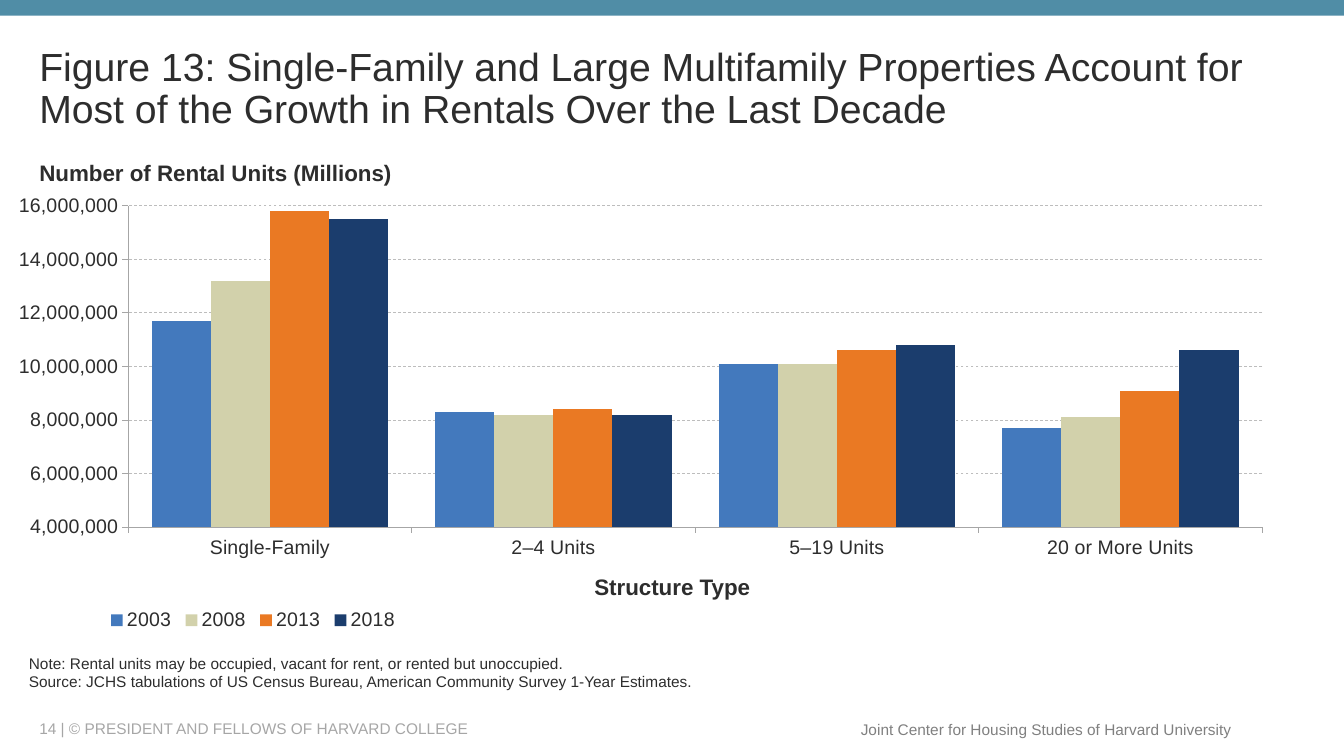
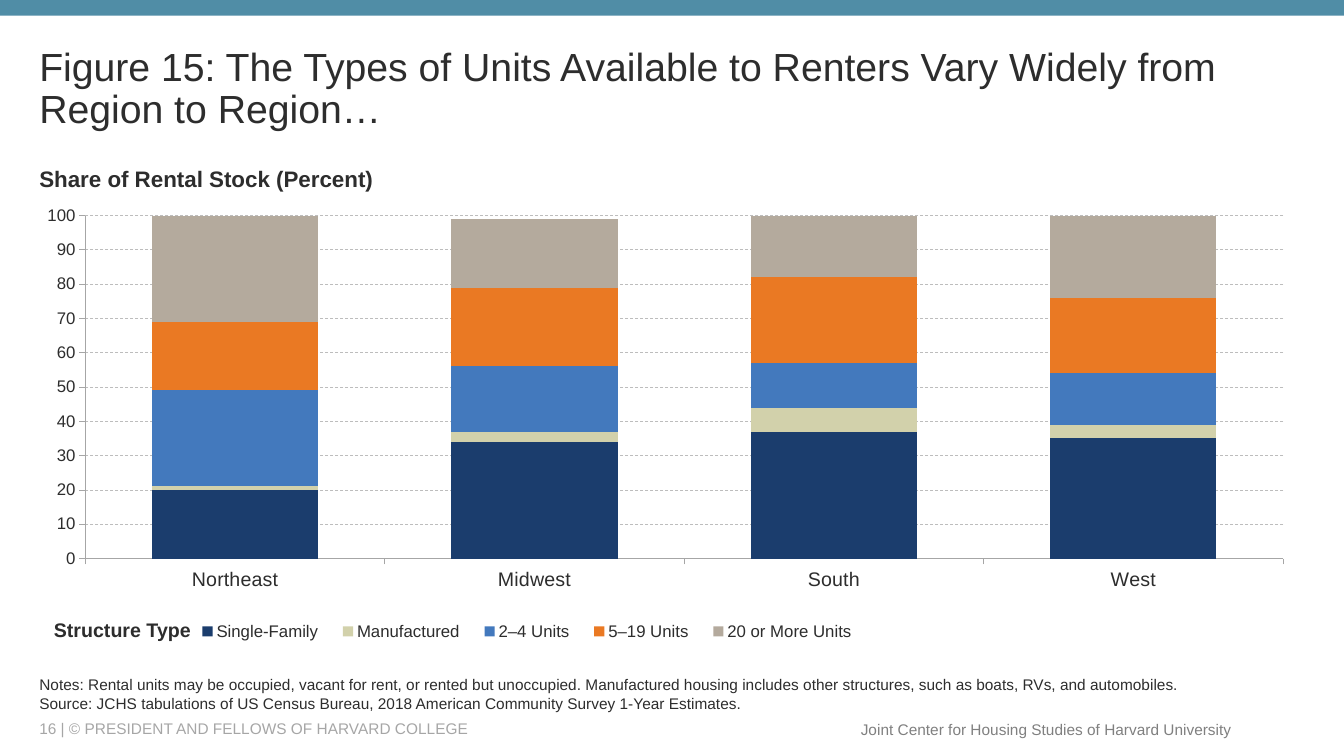
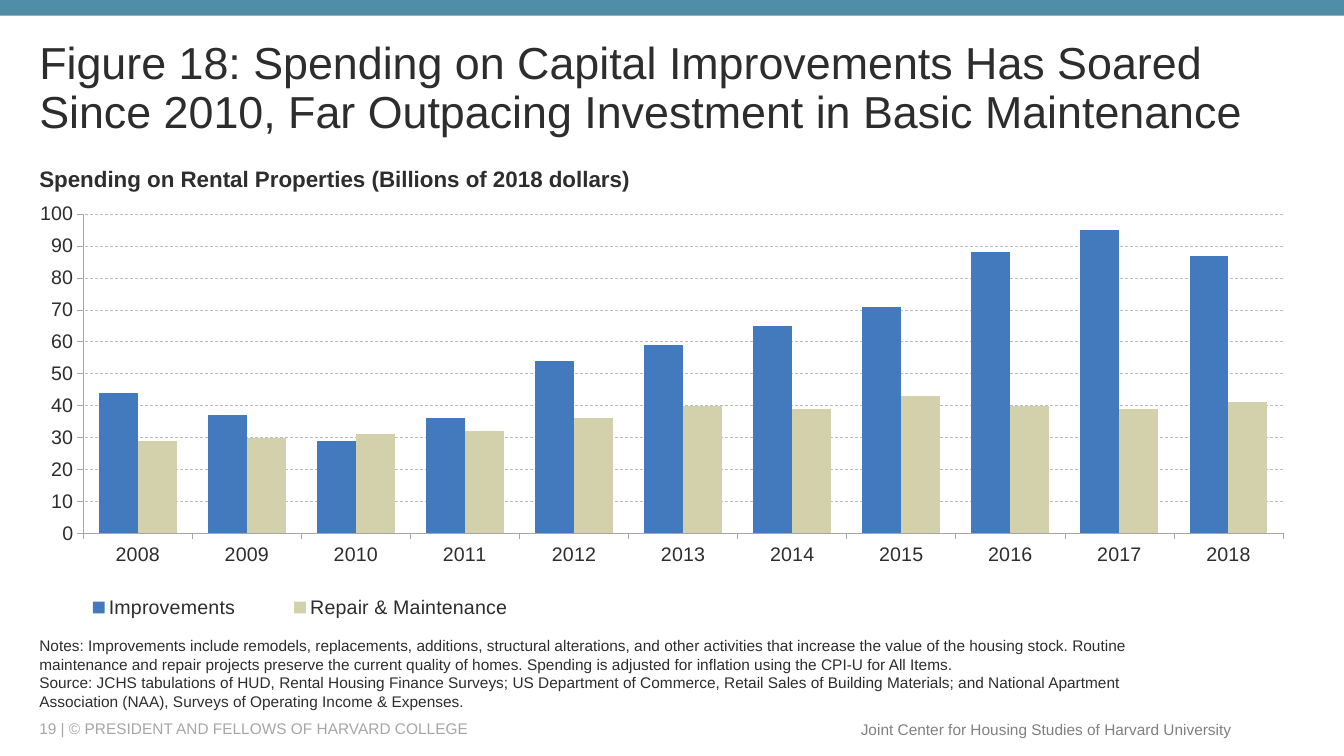
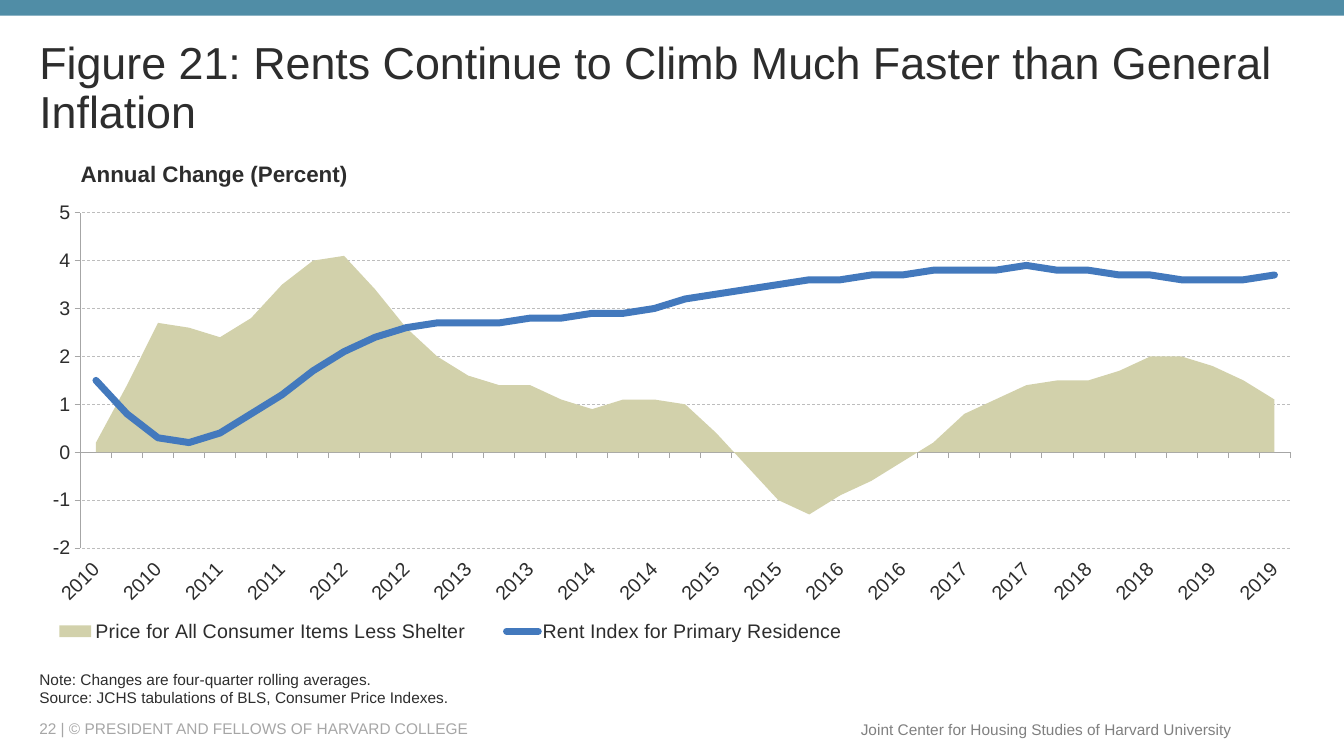
"""Build four slides of rental housing charts."""
from lxml.etree import SubElement
from pptx import Presentation
from pptx.chart.data import CategoryChartData
from pptx.dml.color import RGBColor
from pptx.enum.chart import XL_CHART_TYPE as ChartType
from pptx.enum.chart import XL_LEGEND_POSITION as LegendPosition
from pptx.enum.chart import XL_MARKER_STYLE as MarkerStyle
from pptx.enum.chart import XL_TICK_LABEL_POSITION as LabelPosition
from pptx.enum.chart import XL_TICK_MARK as TickMark
from pptx.enum.dml import MSO_LINE_DASH_STYLE as Dash
from pptx.enum.shapes import MSO_SHAPE as Shape
from pptx.enum.text import MSO_ANCHOR as Anchor
from pptx.enum.text import PP_ALIGN as Align
from pptx.oxml.ns import qn
from pptx.util import Pt

COLORS = {
    "band": "508DA6", "text": "2D2D2D", "copyright": "A6A6A6", "center": "808080",
    "axis": "A6A6A6", "grid": "BDBDBD", "blue": "4379BD", "sand": "D2D1AB",
    "orange": "EA7923", "navy": "1B3D6D", "taupe": "B4AA9D",
}


def rgb(name):
    return RGBColor.from_string(COLORS[name])


class Deck:
    font_name = "Arial"

    def __init__(self):
        self.presentation = Presentation()
        self.presentation.slide_width = Pt(960)
        self.presentation.slide_height = Pt(540)
        self.slide = None

    def style(self, font, size, color="text", bold=False):
        font.name = self.font_name
        font.size = Pt(size)
        font.bold = bold
        font.color.rgb = rgb(color)

    def text(self, box, lines, size, color="text", bold=False,
             align=Align.LEFT, anchor=Anchor.TOP, spacing=None):
        shape = self.slide.shapes.add_textbox(*map(Pt, box))
        frame = shape.text_frame
        frame.word_wrap = True
        frame.vertical_anchor = anchor
        frame.text = "\n".join(lines)
        for paragraph in frame.paragraphs:
            paragraph.alignment = align
            paragraph.line_spacing = spacing
            for run in paragraph.runs:
                self.style(run.font, size, color, bold)

    def start_slide(self, number, title, title_size):
        self.slide = self.presentation.slides.add_slide(self.presentation.slide_layouts[6])
        band = self.slide.shapes.add_shape(Shape.RECTANGLE, 0, 0, Pt(960), Pt(11.25))
        band.shadow.inherit = False
        band.fill.solid()
        band.fill.fore_color.rgb = rgb("band")
        band.line.fill.background()
        self.text((21, 513.5, 570, 14), [f"{number} | © PRESIDENT AND FELLOWS OF HARVARD COLLEGE"],
                  11, "copyright", anchor=Anchor.MIDDLE)
        self.text((560, 510.5, 327, 21), ["Joint Center for Housing Studies of Harvard University"],
                  11, "center", align=Align.RIGHT, anchor=Anchor.MIDDLE)
        self.text((21, 29, 911, 70), [title], title_size, anchor=Anchor.MIDDLE, spacing=0.9)

    def heading(self, left, top, width, label, size=16, align=Align.LEFT):
        self.text((left, top, width, 26.5), [label], size, bold=True, align=align)

    def notes(self, left, bottom, lines):
        self.text((left, bottom - 42, 846, 42), lines, 11, anchor=Anchor.BOTTOM)

    def place(self, element, index, frame, box, inner=False):
        for old in element.findall(qn("c:layout")):
            element.remove(old)
        layout = element.makeelement(qn("c:layout"), {})
        element.insert(index, layout)
        manual = SubElement(layout, qn("c:manualLayout"))
        left, top, width, height = frame
        values = {"xMode": "edge", "yMode": "edge",
                  "x": (box[0] - left) / width, "y": (box[1] - top) / height,
                  "w": box[2] / width, "h": box[3] / height}
        if inner:
            values = {"layoutTarget": "inner", **values}
        for tag, value in values.items():
            SubElement(manual, qn(f"c:{tag}"), val=str(value))

    def axis(self, axis, size):
        axis.major_tick_mark = TickMark.OUTSIDE
        axis.minor_tick_mark = TickMark.NONE
        axis.format.line.color.rgb = rgb("axis")
        axis.format.line.width = Pt(0.5)
        self.style(axis.tick_labels.font, size)

    def chart(self, kind, frame, plot_box, legend_box, categories, series, scale,
              value_size=14, legend_size=14):
        data = CategoryChartData(number_format="General")
        data.categories = categories
        for name, _, values in series:
            data.add_series(name, values)
        chart = self.slide.shapes.add_chart(kind, *map(Pt, frame), data).chart
        chart.has_title = False
        self.style(chart.font, 10)

        category_axis, value_axis = chart.category_axis, chart.value_axis
        self.axis(category_axis, 14)
        self.axis(value_axis, value_size)
        category_axis.has_major_gridlines = False
        category_axis.tick_label_position = LabelPosition.LOW
        value_axis.minimum_scale, value_axis.maximum_scale, value_axis.major_unit = scale
        value_axis.tick_labels.number_format = "#,##0"
        value_axis.tick_labels.number_format_is_linked = False
        value_axis.has_major_gridlines = True
        grid = value_axis.major_gridlines.format.line
        grid.color.rgb = rgb("grid")
        grid.width = Pt(0.5)
        grid.dash_style = Dash.DASH

        chart.has_legend = True
        legend = chart.legend
        legend.position = LegendPosition.BOTTOM
        legend.include_in_layout = False
        self.style(legend.font, legend_size)
        self.place(legend._element, 1, frame, legend_box)
        self.place(chart._chartSpace.chart.plotArea, 0, frame, plot_box, inner=True)

        plot = chart.plots[0]
        plot.vary_by_categories = False
        for item, (_, color, _) in zip(plot.series, series):
            item.format.fill.solid()
            item.format.fill.fore_color.rgb = rgb(color)
        return chart

    def columns(self, kind, *details, **sizes):
        plot = self.chart(kind, *details, **sizes).plots[0]
        plot.gap_width = 80
        if kind == ChartType.COLUMN_STACKED:
            plot.overlap = 100

    def area_with_line(self, *details):
        chart = self.chart(ChartType.AREA, *details)
        area = chart._chartSpace.chart.plotArea.find(qn("c:areaChart"))
        line_plot = area.makeelement(qn("c:lineChart"), {})
        area.addnext(line_plot)
        SubElement(line_plot, qn("c:grouping"), val="standard")
        SubElement(line_plot, qn("c:varyColors"), val="0")
        line_plot.append(area.findall(qn("c:ser"))[-1])
        for axis_id in area.findall(qn("c:axId")):
            SubElement(line_plot, qn("c:axId"), val=axis_id.get("val"))
        for crossing in chart._chartSpace.iter(qn("c:crossBetween")):
            crossing.set("val", "between")
        line = chart.plots[1].series[0]
        line.smooth = False
        line.marker.style = MarkerStyle.NONE
        line.format.fill.background()
        line.format.line.color.rgb = rgb(details[4][-1][1])
        line.format.line.width = Pt(5)
        line_plot.find(".//" + qn("a:ln")).set("cap", "rnd")
        labels = chart.category_axis._element.find(qn("c:txPr"))
        labels.find(qn("a:bodyPr")).set("rot", "-2700000")


def main():
    deck = Deck()

    deck.start_slide(14, "Figure 13: Single-Family and Large Multifamily Properties Account for "
                     "Most of the Growth in Rentals Over the Last Decade", 28)
    deck.notes(13.5, 497, [
        "Note: Rental units may be occupied, vacant for rent, or rented but unoccupied.",
        "Source: JCHS tabulations of US Census Bureau, American Community Survey 1-Year Estimates."])
    deck.columns(
        ChartType.COLUMN_CLUSTERED, (13.5, 132, 919, 323), (88, 147, 813.5, 229.5),
        (70, 432, 215, 22), ["Single-Family", "2–4 Units", "5–19 Units", "20 or More Units"],
        [("2003", "blue", [11700000, 8300000, 10100000, 7700000]),
         ("2008", "sand", [13200000, 8200000, 10100000, 8100000]),
         ("2013", "orange", [15800000, 8400000, 10600000, 9100000]),
         ("2018", "navy", [15500000, 8200000, 10800000, 10600000])],
        (4000000, 16000000, 2000000))
    deck.heading(21, 110, 447, "Number of Rental Units (Millions)")
    deck.heading(404, 405.5, 152.5, "Structure Type", align=Align.CENTER)

    deck.start_slide(16, "Figure 15: The Types of Units Available to Renters Vary Widely from "
                     "Region to Region…", 28)
    deck.notes(21, 512.5, [
        "Notes: Rental units may be occupied, vacant for rent, or rented but unoccupied. "
        "Manufactured housing includes other structures, such as boats, RVs, and automobiles.",
        "Source: JCHS tabulations of US Census Bureau, 2018 American Community Survey "
        "1-Year Estimates."])
    deck.columns(
        ChartType.COLUMN_STACKED, (13.5, 132, 919, 335.5), (61, 154, 855.5, 245),
        (131, 440, 491, 22), ["Northeast", "Midwest", "South", "West"],
        [("Single-Family", "navy", [20, 34, 37, 35]),
         ("Manufactured", "sand", [1, 3, 7, 4]),
         ("2–4 Units", "blue", [28, 19, 13, 15]),
         ("5–19 Units", "orange", [20, 23, 25, 22]),
         ("20 or More Units", "taupe", [31, 20, 18, 24])],
        (0, 100, 10), value_size=12, legend_size=12)
    deck.heading(21, 114.5, 319, "Share of Rental Stock (Percent)")
    deck.heading(5.5, 438, 164, "Structure Type", 14, Align.CENTER)

    deck.start_slide(19, "Figure 18: Spending on Capital Improvements Has Soared Since 2010, "
                     "Far Outpacing Investment in Basic Maintenance", 32)
    deck.notes(21, 511, [
        "Notes: Improvements include remodels, replacements, additions, structural alterations, "
        "and other activities that increase the value of the housing stock. Routine maintenance "
        "and repair projects preserve the current quality of homes. Spending is adjusted for "
        "inflation using the CPI-U for All Items.",
        "Source: JCHS tabulations of HUD, Rental Housing Finance Surveys; US Department of "
        "Commerce, Retail Sales of Building Materials; and National Apartment Association (NAA), "
        "Surveys of Operating Income & Expenses."])
    deck.columns(
        ChartType.COLUMN_CLUSTERED, (13.5, 132, 919, 321), (59.5, 153, 857, 228),
        (29, 423, 371, 22), [str(year) for year in range(2008, 2019)],
        [("Improvements", "blue", [44, 37, 29, 36, 54, 59, 65, 71, 88, 95, 87]),
         ("Repair & Maintenance", "sand", [29, 30, 31, 32, 36, 40, 39, 43, 40, 39, 41])],
        (0, 100, 10))
    deck.heading(21, 114.5, 572, "Spending on Rental Properties (Billions of 2018 dollars)")

    deck.start_slide(22, "Figure 21: Rents Continue to Climb Much Faster than General Inflation", 32)
    deck.notes(21, 508.5, ["Note: Changes are four-quarter rolling averages.",
                           "Source: JCHS tabulations of BLS, Consumer Price Indexes."])
    prices = [0.2, 1.4, 2.7, 2.6, 2.4, 2.8, 3.5, 4, 4.1, 3.4, 2.6, 2, 1.6, 1.4, 1.4, 1.1, 0.9,
              1.1, 1.1, 1, 0.4, -0.3, -1, -1.3, -0.9, -0.6, -0.2, 0.2, 0.8, 1.1, 1.4, 1.5, 1.5,
              1.7, 2, 2, 1.8, 1.5, 1.1]
    rents = [1.5, 0.8, 0.3, 0.2, 0.4, 0.8, 1.2, 1.7, 2.1, 2.4, 2.6, 2.7, 2.7, 2.7, 2.8, 2.8, 2.9,
             2.9, 3, 3.2, 3.3, 3.4, 3.5, 3.6, 3.6, 3.7, 3.7, 3.8, 3.8, 3.8, 3.9, 3.8, 3.8, 3.7,
             3.7, 3.6, 3.6, 3.6, 3.7]
    deck.area_with_line(
        (0, 142, 942.5, 320), (57.5, 152, 864, 239.5), (18, 440, 608, 22),
        [str(2010 + quarter // 4) for quarter in range(len(prices))],
        [("Price for All Consumer Items Less Shelter", "sand", prices),
         ("Rent Index for Primary Residence", "blue", rents)],
        (-2, 5, 1))
    deck.heading(50.5, 111, 843, "Annual Change (Percent)")

    deck.presentation.save("out.pptx")


if __name__ == "__main__":
    main()
